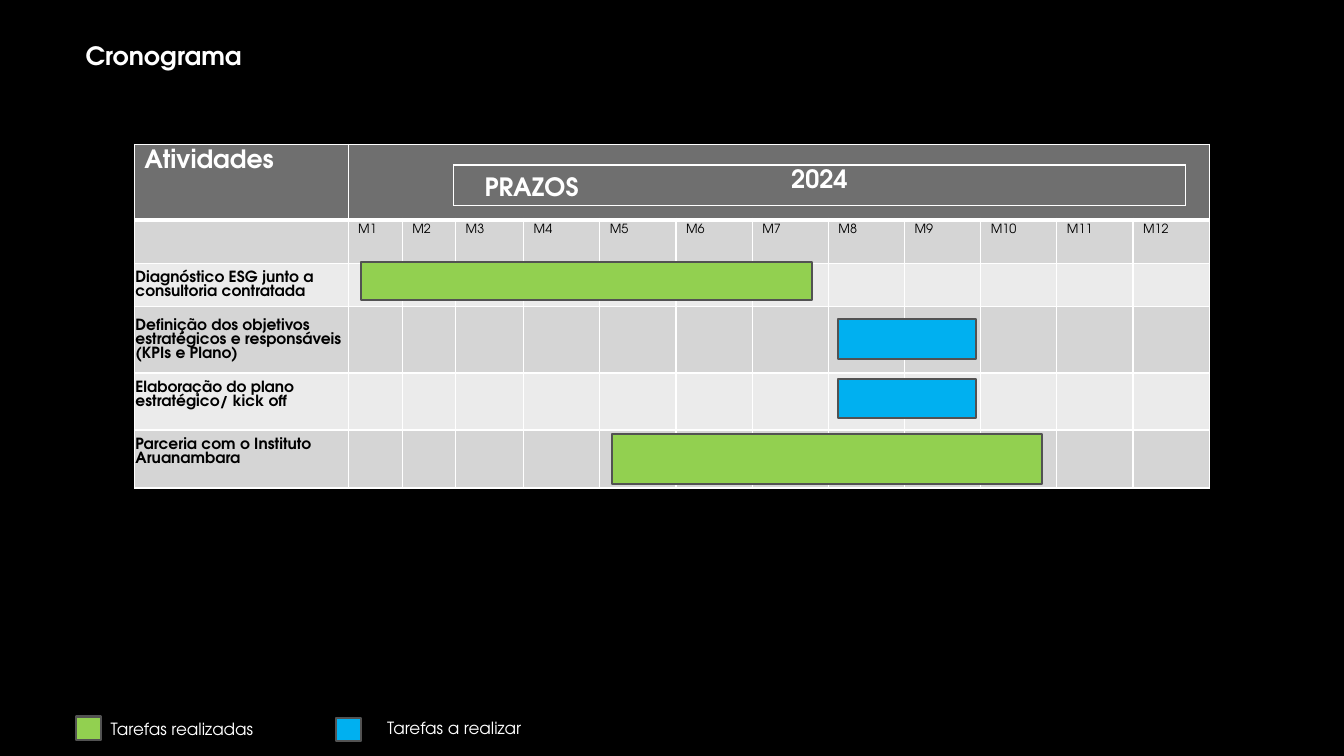
import pptx
import pptx.util
import pptx.dml.color
import pptx.enum.shapes
import pptx.enum.text
import pptx.oxml.ns
from lxml import etree

WHITE, BLACK, HEADER = "FFFFFF", "000000", "6F6F6F"
DARK_BAND, LIGHT_BAND, OUTLINE = "D5D5D5", "EBEBEB", "525252"
DONE, TO_DO = "92D050", "00B0F0"
ANCHOR = pptx.enum.text.MSO_ANCHOR


def rgb(value):
    return pptx.dml.color.RGBColor.from_string(value)


def write(tf, text, size=12, color=WHITE, bold=False, align=None):
    p = tf.paragraphs[0]
    p.alignment = align
    r = p.add_run()
    r.text = text
    r.font.name = "TeX Gyre Adventor"
    r.font.size = pptx.util.Pt(size)
    r.font.bold = bold
    r.font.color.rgb = rgb(color)


class Slide:
    """Places elements on a grid of 160 columns by 90 rows."""

    def __init__(self, prs):
        self.col = prs.slide_width / 160
        self.row = prs.slide_height / 90
        self.s = prs.slides.add_slide(prs.slide_layouts[6])
        self.s.background.fill.solid()
        self.s.background.fill.fore_color.rgb = rgb(BLACK)

    def box(self, x, y, w, h):
        return (round(x * self.col), round(y * self.row),
                round(w * self.col), round(h * self.row))

    def text(self, x, y, w, h, text, **style):
        sp = self.s.shapes.add_textbox(*self.box(x, y, w, h))
        sp.text_frame.word_wrap = True
        write(sp.text_frame, text, **style)

    def bar(self, x, y, w, h, color):
        sp = self.s.shapes.add_shape(
            pptx.enum.shapes.MSO_SHAPE.RECTANGLE, *self.box(x, y, w, h))
        sp.shadow.inherit = False
        sp.fill.solid()
        sp.fill.fore_color.rgb = rgb(color)
        sp.line.color.rgb = rgb(OUTLINE)
        sp.line.width = pptx.util.Pt(1.5)

    def table(self, x, y, cols, rows):
        frame = self.s.shapes.add_table(
            len(rows), len(cols), *self.box(x, y, sum(cols), sum(rows)))
        table = frame.table
        for column, width in zip(table.columns, cols):
            column.width = round(width * self.col)
        for line, height in zip(table.rows, rows):
            line.height = round(height * self.row)
        return table

    def cell(self, cell, fill=None, top=1, bottom=1):
        tc_pr = cell._tc.get_or_add_tcPr()
        qn = pptx.oxml.ns.qn
        for side, width in zip("LRTB", (1, 1, top, bottom)):
            ln = etree.SubElement(tc_pr, qn("a:ln" + side),
                                  w=str(pptx.util.Pt(width)))
            solid = etree.SubElement(ln, qn("a:solidFill"))
            etree.SubElement(solid, qn("a:srgbClr"), val=WHITE)
        if fill:
            cell.fill.solid()
            cell.fill.fore_color.rgb = rgb(fill)
        else:
            cell.fill.background()


def main():
    prs = pptx.Presentation()
    prs.slide_width = pptx.util.Inches(13.33)
    prs.slide_height = pptx.util.Inches(7.5)
    s = Slide(prs)
    title = dict(size=18, bold=True)

    # Title and legend
    s.text(9, 4.2, 110, 4.8, "Cronograma", **title)
    s.bar(9, 85.3, 3, 2.8, DONE)
    s.bar(40, 85.45, 3, 2.8, TO_DO)
    s.text(12, 85, 26, 3.6, "Tarefas realizadas")
    s.text(44.9, 84.85, 26, 3.6, "Tarefas a realizar")

    # Schedule table: activity column, then twelve months
    cols = [25.45, 6.45, 6.35, 8.1] + [9.07] * 9
    rows = [8.95, 5.2, 5.15, 7.9, 6.8, 6.9]
    table = s.table(16, 17.2, cols, rows)
    for i in range(len(rows)):
        fill = HEADER if i == 0 else DARK_BAND if i % 2 else LIGHT_BAND
        for j in range(len(cols)):
            s.cell(table.cell(i, j), fill, top=3 if i == 1 else 1,
                   bottom=3 if i == 0 else 1)
    table.cell(0, 1).merge(table.cell(0, 12))
    write(table.cell(0, 0).text_frame, "Atividades", **title)
    for month in range(1, 13):
        write(table.cell(1, month).text_frame, f"M{month}", size=9,
              color=BLACK)

    # Activity names, with the bottom margin of each cell
    activities = [
        ("Diagnóstico ESG junto a consultoria contratada", 0),
        ("Definição dos objetivos estratégicos e responsáveis (KPIs e Plano)", 0),
        ("Elaboração do plano estratégico/ kick off", 0.14),
        ("Parceria com o Instituto Aruanambara", 0.14),
    ]
    for i, (name, bottom) in enumerate(activities, 2):
        cell = table.cell(i, 0)
        cell.margin_left = cell.margin_right = pptx.util.Inches(0.01)
        cell.margin_top = pptx.util.Inches(0.01)
        cell.margin_bottom = pptx.util.Inches(bottom)
        cell.vertical_anchor = ANCHOR.MIDDLE
        write(cell.text_frame, name, size=11, color=BLACK, bold=True)

    # Deadline heading and year frame
    s.text(56.5, 19.8, 33.7, 4.8, "PRAZOS", **title)
    year = s.table(54, 19.65, [87.1], [4.8]).cell(0, 0)
    s.cell(year)
    write(year.text_frame, "2024", align=pptx.enum.text.PP_ALIGN.CENTER,
          **title)

    # Task bars
    for x, y, w, h, color in [
        (43, 31.2, 53.7, 4.5, DONE),
        (99.8, 38, 16.4, 4.8, TO_DO),
        (99.8, 45.1, 16.4, 4.7, TO_DO),
        (72.9, 51.7, 51.1, 5.95, DONE),
    ]:
        s.bar(x, y, w, h, color)

    prs.save("out.pptx")


if __name__ == "__main__":
    main()
